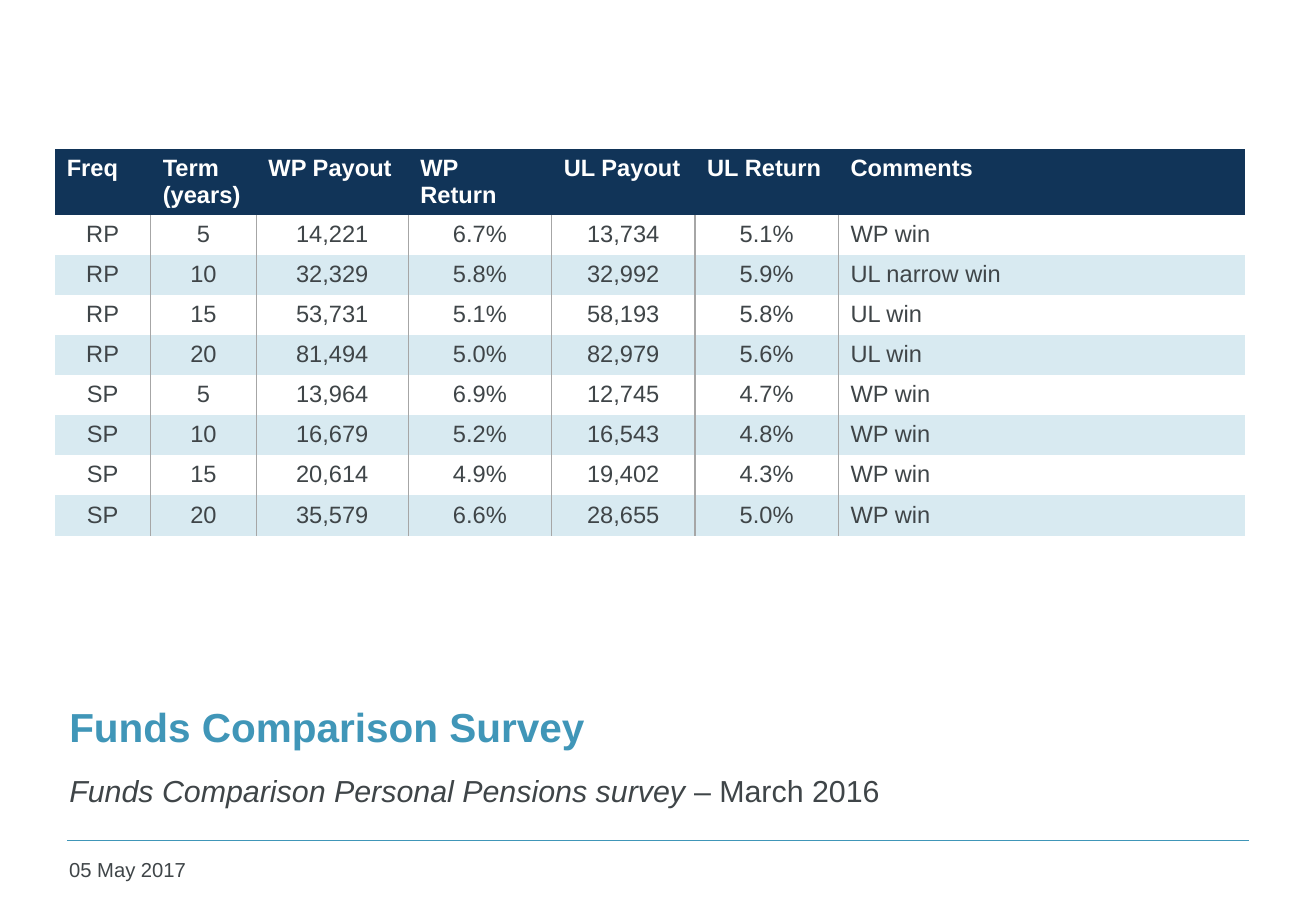
from lxml import etree
from pptx import Presentation
from pptx import util as u
from pptx.dml.color import RGBColor
from pptx.enum import shapes, text
from pptx.oxml import ns

PX = 9144  # EMU per px, 100 px to the inch
FONT = "Arial"
BLUE = RGBColor(0x40, 0x96, 0xB8)
NAVY = RGBColor(0x11, 0x34, 0x58)
PALE = RGBColor(0xD8, 0xEA, 0xF1)
WHITE = RGBColor(0xFF, 0xFF, 0xFF)
INK = RGBColor(0x3F, 0x45, 0x48)
GREY = RGBColor(0xA6, 0xA6, 0xA6)

HEADINGS = ["Freq", "Term (years)", "WP Payout", "WP Return",
            "UL Payout", "UL Return", "Comments"]
RESULTS = [
    ["RP", "5", "14,221", "6.7%", "13,734", "5.1%", "WP win"],
    ["RP", "10", "32,329", "5.8%", "32,992", "5.9%", "UL narrow win"],
    ["RP", "15", "53,731", "5.1%", "58,193", "5.8%", "UL win"],
    ["RP", "20", "81,494", "5.0%", "82,979", "5.6%", "UL win"],
    ["SP", "5", "13,964", "6.9%", "12,745", "4.7%", "WP win"],
    ["SP", "10", "16,679", "5.2%", "16,543", "4.8%", "WP win"],
    ["SP", "15", "20,614", "4.9%", "19,402", "4.3%", "WP win"],
    ["SP", "20", "35,579", "6.6%", "28,655", "5.0%", "WP win"],
]
COLUMN_WIDTHS = [79, 87, 125, 118, 118, 118, 335]
HEADER_HEIGHT, ROW_HEIGHT = 54, 33


def px(*lengths):
    return [u.Emu(length * PX) for length in lengths]


def add_text(para, words, size, color=INK, bold=False, italic=False,
             align=text.PP_ALIGN.LEFT):
    para.alignment = align
    span = para.add_run()
    span.text = words
    font = span.font
    font.name, font.size, font.color.rgb = FONT, u.Pt(size), color
    font.bold, font.italic = bold, italic


def place_text(shape, box, anchor=text.MSO_ANCHOR.TOP):
    """Move a text shape into the box and return its first paragraph."""
    shape.left, shape.top, shape.width, shape.height = px(*box)
    frame = shape.text_frame
    frame.word_wrap = True
    frame.auto_size = text.MSO_AUTO_SIZE.NONE
    frame.vertical_anchor = anchor
    return frame.paragraphs[0]


def set_border(cell, side, color=None):
    line = etree.SubElement(cell._tc.get_or_add_tcPr(), ns.qn(f"a:ln{side}"),
                            w=str(u.Pt(1)))
    if color is None:
        etree.SubElement(line, ns.qn("a:noFill"))
    else:
        fill = etree.SubElement(line, ns.qn("a:solidFill"))
        etree.SubElement(fill, ns.qn("a:srgbClr"), val=str(color))


def add_results_table(page, left, top):
    rows = [HEADINGS] + RESULTS
    heights = [HEADER_HEIGHT] + [ROW_HEIGHT] * len(RESULTS)
    last = len(HEADINGS) - 1
    frame = page.shapes.add_table(
        len(rows), len(HEADINGS),
        *px(left, top, sum(COLUMN_WIDTHS), sum(heights)))
    table = frame.table
    for column, width in zip(table.columns, px(*COLUMN_WIDTHS)):
        column.width = width
    for row, height in zip(table.rows, px(*heights)):
        row.height = height

    for r, values in enumerate(rows):
        header = r == 0
        for c, value in enumerate(values):
            cell = table.cell(r, c)
            # Vertical rules stand only between the result columns
            set_border(cell, "L", None if header or c == 0 else GREY)
            set_border(cell, "R", None if header or c == last else GREY)
            set_border(cell, "T")
            set_border(cell, "B")
            cell.fill.solid()
            cell.fill.fore_color.rgb = NAVY if header else (PALE, WHITE)[r % 2]
            centred = not header and c < last
            add_text(cell.text_frame.paragraphs[0], value, 14,
                     color=WHITE if header else INK, bold=header,
                     align=text.PP_ALIGN.CENTER if centred else text.PP_ALIGN.LEFT)


def add_caption(page, left, top):
    # Rule above the date
    rule = page.shapes.add_connector(
        shapes.MSO_CONNECTOR.STRAIGHT,
        *px(left + 8, top + 131, left + 981, top + 131))
    rule.line.color.rgb, rule.line.width = BLUE, u.Pt(1)
    etree.SubElement(rule._element.spPr, ns.qn("a:effectLst"))

    # Title
    title = place_text(page.shapes.title, (left, top, 650, 62),
                       anchor=text.MSO_ANCHOR.BOTTOM)
    add_text(title, "Funds Comparison Survey", 24, color=BLUE, bold=True)

    # Subtitle without a bullet
    para = place_text(page.placeholders[1], (left, top + 70, 786, 88))
    para.space_before = u.Pt(2)
    props = para._p.get_or_add_pPr()
    props.set("marL", "0")
    props.set("indent", "0")
    etree.SubElement(props, ns.qn("a:buNone"))
    add_text(para, "Funds Comparison Personal Pensions survey", 18, italic=True)
    add_text(para, " – March 2016", 18)

    # Date
    box = (left, top + 140, 239, 36)
    date = place_text(page.shapes.add_textbox(*px(*box)), box)
    add_text(date, "05 May 2017", 12)


def main():
    deck = Presentation()
    deck.slide_width, deck.slide_height = px(1083, 750)
    page = deck.slides.add_slide(deck.slide_layouts[1])
    add_caption(page, 47, 561)
    add_results_table(page, 45, 123)
    deck.save("out.pptx")


if __name__ == "__main__":
    main()
